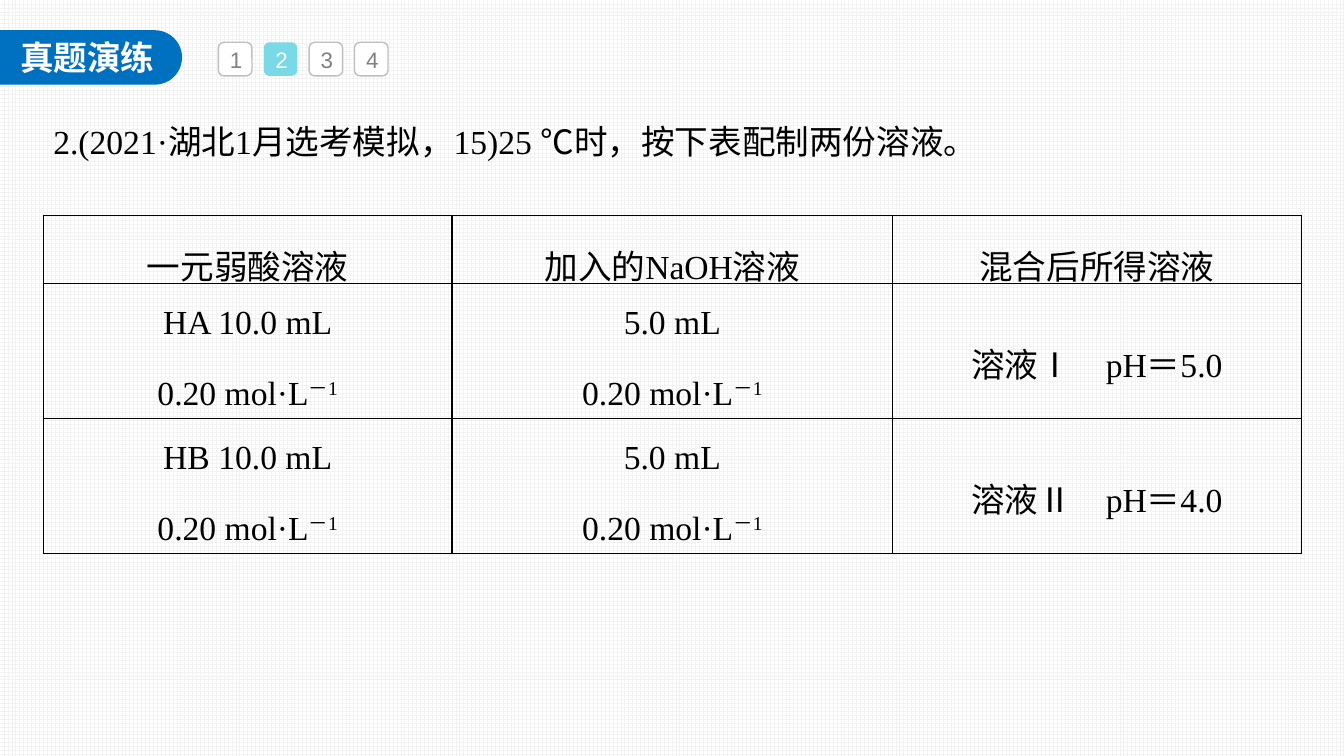
from pptx import Presentation, util as u
from pptx.dml.color import RGBColor
from pptx.enum import dml, shapes, text
from pptx.oxml import parse_xml
from pptx.oxml.ns import nsdecls

COLORS = {"blue": "0070C0", "aqua": "7AD9E7", "white": "FFFFFF", "pale": "F2F2F2",
          "edge": "BFBFBF", "gray": "808080", "black": "000000"}
SERIF, SANS, HAN = "Times New Roman", "Arial", "Noto Sans CJK SC"
LEFT, CENTER = text.PP_ALIGN.LEFT, text.PP_ALIGN.CENTER
MIDDLE = text.MSO_ANCHOR.MIDDLE
COLS, ROWS = 133.33, 75


def grid(*units):
    return [u.Inches(n / 10) for n in units]


def color(name):
    return RGBColor.from_string(COLORS[name])


class Deck:
    """Draws styled elements on one slide, on a grid of tenth-inch columns and rows."""

    def __init__(self):
        self.prs = Presentation()
        self.prs.slide_width, self.prs.slide_height = grid(COLS, ROWS)
        self.slide = self.prs.slides.add_slide(self.prs.slide_layouts[5])
        fill = self.slide.background.fill
        fill.patterned()
        fill.pattern = dml.MSO_PATTERN.LARGE_GRID
        fill.fore_color.rgb = color("pale")
        fill.back_color.rgb = color("white")

    def words(self, frame, lines, size=24, font=SERIF, ink="black", align=LEFT,
              space=None, bold=False):
        frame.text = "\n".join(line.split("|")[0] for line in lines)
        for para, line in zip(frame.paragraphs, lines):
            para.alignment = align
            para.line_spacing = space
            for part in line.split("|")[1:]:
                para.add_run().text = part
            for run in para.runs:
                run.font.size, run.font.bold = u.Pt(size), bold
                run.font.color.rgb = color(ink)
                run.font.name = HAN if run.text[0] in "℃ⅠⅡ" else font
                props = run.font._element
                props.append(parse_xml(f'<a:ea {nsdecls("a")} typeface="{HAN}"/>'))
                if run.text.startswith("－"):
                    props.set("baseline", "30000")

    def shape(self, kind, box, fill, line=None):
        item = self.slide.shapes.add_shape(kind, *grid(*box))
        item.shadow.inherit = False
        item.fill.solid()
        item.fill.fore_color.rgb = color(fill)
        if line:
            item.line.color.rgb = color(line)
            item.line.width = u.Pt(1)
        else:
            item.line.fill.background()
        return item

    def title(self, line, box):
        item = self.slide.shapes.title
        item.left, item.top, item.width, item.height = grid(*box)
        frame = item.text_frame
        self.words(frame, [line], font=SANS, ink="white", bold=True)
        frame.word_wrap = False
        frame.vertical_anchor = text.MSO_ANCHOR.TOP
        frame.auto_size = text.MSO_AUTO_SIZE.SHAPE_TO_FIT_TEXT
        return item

    def banner(self, line):
        shape = self.shape(shapes.MSO_SHAPE.ROUND_2_SAME_RECTANGLE,
                           (6.33, -3.33, 5.4, 18.06), "blue")
        shape.rotation = 90
        shape.adjustments[0], shape.adjustments[1] = 0.5, 0
        shape.element.addnext(self.title(line, (1, 3.2, 15.5, 5)).element)

    def tab(self, number, left, active):
        fill, line, ink = ("aqua", None, "white") if active else ("white", "edge", "gray")
        item = self.shape(shapes.MSO_SHAPE.ROUNDED_RECTANGLE,
                          (left, 4.2, 3.33, 3.33), fill, line)
        item.text_frame.vertical_anchor = MIDDLE
        self.words(item.text_frame, [str(number)], 16, SANS, ink, CENTER)

    def label(self, line, box):
        frame = self.slide.shapes.add_textbox(*grid(*box)).text_frame
        frame.word_wrap = True
        frame.auto_size = text.MSO_AUTO_SIZE.SHAPE_TO_FIT_TEXT
        self.words(frame, [line])

    def border(self, cell):
        props = cell._tc.get_or_add_tcPr()
        for spot, side in enumerate("LRTB"):
            props.insert(spot, parse_xml(
                f'<a:ln{side} {nsdecls("a")} w="12700"><a:solidFill>'
                f'<a:srgbClr val="{COLORS["black"]}"/></a:solidFill></a:ln{side}>'))

    def table(self, data, box, widths, heights):
        table = self.slide.shapes.add_table(len(data), len(data[0]), *grid(*box)).table
        table.first_row = table.horz_banding = False
        for col, width in zip(table.columns, grid(*widths)):
            col.width = width
        for row, height, record in zip(table.rows, grid(*heights), data):
            row.height = height
            for cell, lines in zip(row.cells, record):
                cell.fill.background()
                self.border(cell)
                cell.vertical_anchor = MIDDLE
                cell.margin_left = cell.margin_right = u.Inches(0.04)
                cell.margin_top = cell.margin_bottom = 0
                self.words(cell.text_frame, lines, align=CENTER, space=1.5)


def main():
    deck = Deck()
    deck.banner("真题演练")
    for n in range(4):
        deck.tab(n + 1, 21.67 + 4.5 * n, n == 1)
    deck.label("2.(2021·湖北1月选考模拟，15)25 |℃|时，按下表配制两份溶液。",
               (4.3, 11.5, 124.8, 5))
    dose = "0.20 mol·L|－1"
    data = [[["一元弱酸溶液"], ["加入的NaOH溶液"], ["混合后所得溶液"]]]
    for acid, mark, ph in (("HA", "Ⅰ", "5.0"), ("HB", "Ⅱ", "4.0")):
        data.append([[f"{acid} 10.0 mL", dose], ["5.0 mL", dose],
                     [f"溶液|{mark}　|pH＝{ph}"]])
    deck.table(data, (4.3, 21.4, 124.8, 33.5), (40.55, 43.7, 40.55), (6.7, 13.4, 13.4))
    deck.prs.save("out.pptx")


if __name__ == "__main__":
    main()
